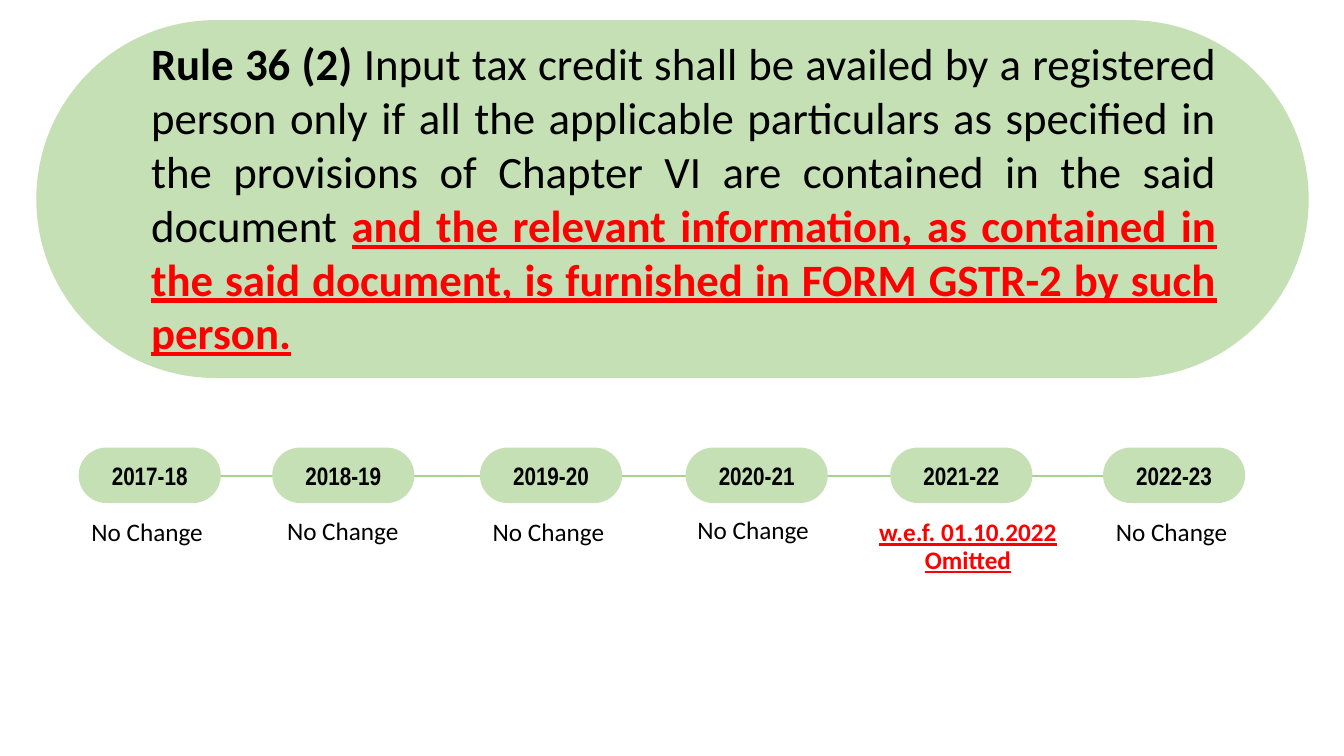
from lxml import etree
from pptx import Presentation
from pptx import util as u
from pptx.dml.color import RGBColor
from pptx.enum import shapes, text
from pptx.oxml.ns import qn

COLORS = {"pill": "C5E0B4", "line": "A9D18E", "black": "000000", "red": "FF0000"}
PLAIN = {"color": "black"}
BOLD = {"color": "black", "bold": True}
OMITTED = {"color": "red", "bold": True, "underline": True}


def write(shape, paragraphs, size, font="Calibri", align=text.PP_ALIGN.CENTER,
          inset=0.1, vertical_inset=0.1, anchor=text.MSO_ANCHOR.TOP, spacing=None):
    frame = shape.text_frame
    frame.word_wrap = True
    frame.vertical_anchor = anchor
    frame.margin_left = frame.margin_right = u.Inches(inset)
    frame.margin_top = frame.margin_bottom = u.Inches(vertical_inset)
    for index, runs in enumerate(paragraphs):
        paragraph = frame.add_paragraph() if index else frame.paragraphs[0]
        paragraph.alignment = align
        paragraph.line_spacing = spacing
        for content, style in runs:
            run = paragraph.add_run()
            run.text = content
            run.font.name = font
            run.font.size = u.Pt(size)
            run.font.bold = style.get("bold", False)
            run.font.underline = style.get("underline", False)
            run.font.color.rgb = RGBColor.from_string(COLORS[style["color"]])


def add_pill(left, top, width, height):
    pill = slide.shapes.add_shape(
        shapes.MSO_SHAPE.ROUNDED_RECTANGLE,
        u.Inches(left), u.Inches(top), u.Inches(width), u.Inches(height))
    pill.adjustments[0] = 0.5
    pill.shadow.inherit = False
    pill.fill.solid()
    pill.fill.fore_color.rgb = RGBColor.from_string(COLORS["pill"])
    pill.line.fill.background()
    return pill


presentation = Presentation()
presentation.slide_width = u.Inches(13.33)
presentation.slide_height = u.Inches(7.5)
slide = presentation.slides.add_slide(presentation.slide_layouts[6])

add_pill(0.36, 0.2, 12.62, 3.55)
rule_box = slide.shapes.add_textbox(
    u.Inches(1.4), u.Inches(0.31), u.Inches(10.77), u.Inches(3.33))
write(rule_box, [[
    ("Rule 36 (2) ", BOLD),
    ("Input tax credit shall be availed by a registered person only if all the "
     "applicable particulars as specified in the provisions of Chapter VI are "
     "contained in the said document ", PLAIN),
    ("and the relevant information, as contained in the said document, is "
     "furnished in FORM GSTR-2 by such person.", OMITTED),
]], 32, align=text.PP_ALIGN.JUSTIFY, vertical_inset=0.05)
rule_box.text_frame.auto_size = text.MSO_AUTO_SIZE.SHAPE_TO_FIT_TEXT

timeline = slide.shapes.add_connector(
    shapes.MSO_CONNECTOR.STRAIGHT,
    u.Inches(1.61), u.Inches(4.72), u.Inches(12.17), u.Inches(4.72))
timeline.line.color.rgb = RGBColor.from_string(COLORS["line"])
timeline.line.width = u.Pt(1.5)
etree.SubElement(timeline._element.spPr, qn("a:effectLst"))

no_change = [[("No Change", PLAIN)]]
omission = [[("w.e.f. 01.10.2022", OMITTED)], [("Omitted", OMITTED)]]
years = [
    ("2017-18", 0.78, 0.71, 5.06, 1.5, no_change),
    ("2018-19", 2.7, 2.65, 5.05, 1.5, no_change),
    ("2019-20", 4.76, 4.69, 5.06, 1.5, no_change),
    ("2020-21", 6.8, 6.45, 5.04, 2.04, no_change),
    ("2021-22", 8.83, 8.58, 5.06, 2.04, omission),
    ("2022-23", 10.94, 10.87, 5.06, 1.5, no_change),
]
for year, pill_left, note_left, note_top, note_width, note in years:
    year_pill = add_pill(pill_left, 4.44, 1.41, 0.55)
    write(year_pill, [[(year, BOLD)]], 18, font="Arial Narrow",
          anchor=text.MSO_ANCHOR.MIDDLE)
    note_box = slide.shapes.add_textbox(
        u.Inches(note_left), u.Inches(note_top), u.Inches(note_width), u.Inches(0.68))
    write(note_box, note, 18, spacing=0.9)

presentation.save("out.pptx")
